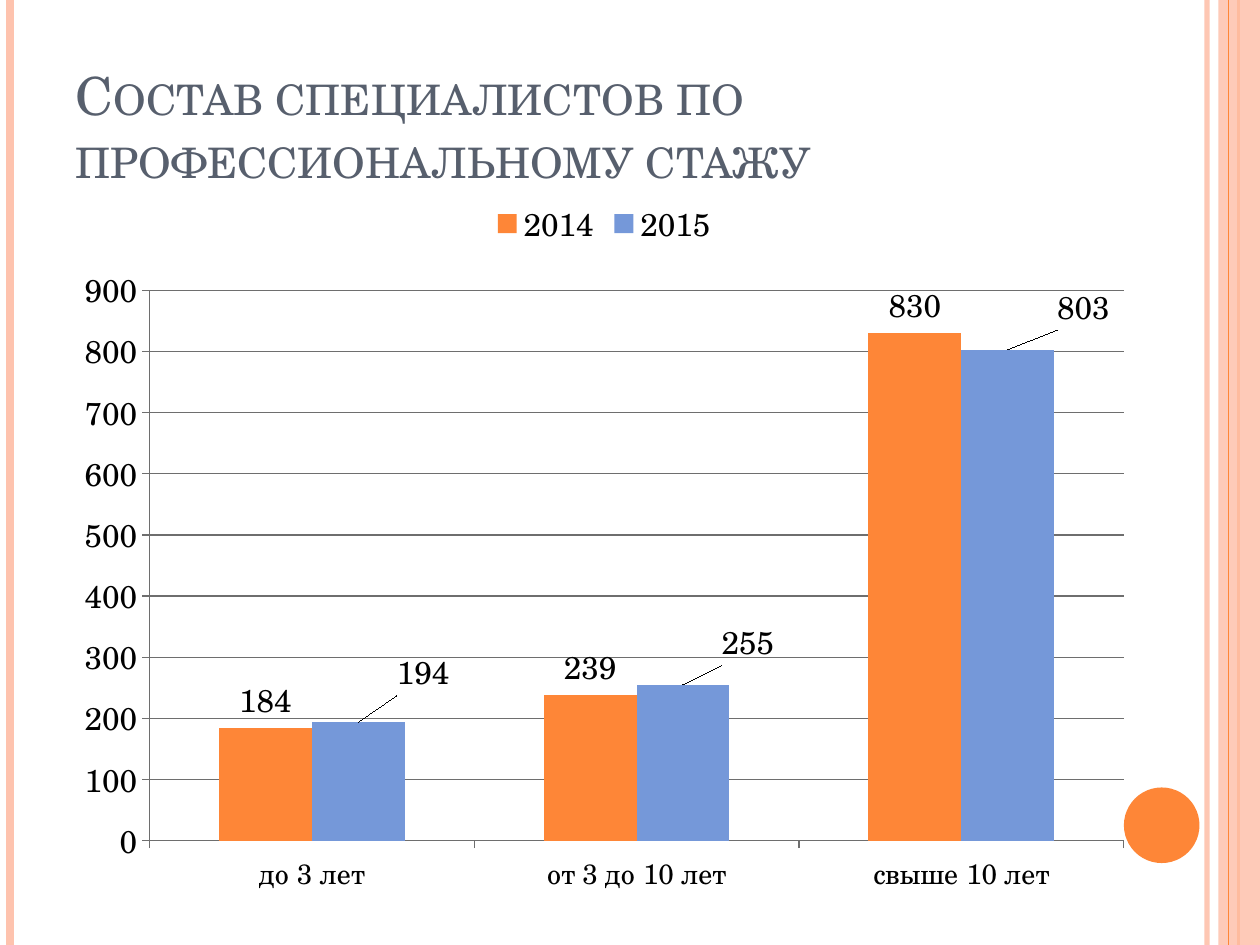
from typing import NamedTuple

from lxml.etree import SubElement
from pptx import Presentation
from pptx.chart.data import CategoryChartData
from pptx.dml.color import RGBColor
from pptx.enum.chart import XL_CHART_TYPE as ChartType
from pptx.enum.chart import XL_LABEL_POSITION as LabelPosition
from pptx.enum.chart import XL_LEGEND_POSITION as LegendPosition
from pptx.enum.chart import XL_TICK_MARK as TickMark
from pptx.enum.shapes import MSO_CONNECTOR as Connector
from pptx.enum.shapes import MSO_SHAPE as Shape
from pptx.enum.text import MSO_ANCHOR as Anchor
from pptx.enum.text import MSO_AUTO_SIZE as AutoSize
from pptx.enum.text import PP_ALIGN as Align
from pptx.oxml import parse_xml
from pptx.oxml.ns import nsdecls, qn
from pptx.util import Inches, Pt

FONT = "TeX Gyre Schola"
ORANGE, PEACH, BLUE, SLATE = "FE8637", "FEC3AE", "7598D9", "575F6D"
BLACK, GRAY = "000000", "6E6E6E"
PAGE_HEIGHT = 7.5


class Stripe(NamedTuple):
    x: float
    color: str
    width: float
    opacity: int = 100


class Block(NamedTuple):
    kind: Shape
    left: float
    top: float
    width: float
    height: float
    color: str
    opacity: int = 100


class Series(NamedTuple):
    name: str
    values: tuple[int, ...]
    color: str
    label_shifts: tuple[tuple[float, float], ...] = ()


DECORATION = (
    Stripe(9.58, PEACH, 3, 93),
    Stripe(0.08, PEACH, 4.5),
    Stripe(9.83, ORANGE, 1.5),
    Block(Shape.RECTANGLE, 9.67, 0, 0.33, PAGE_HEIGHT, PEACH, 87),
    Stripe(9.75, ORANGE, 0.75),
    Block(Shape.OVAL, 8.92, 6.25, 0.6, 0.6, ORANGE),
)
CATEGORIES = ("до 3 лет", "от 3 до 10 лет", "свыше 10 лет")
SERIES = (
    Series("2014", (184, 239, 830), ORANGE),
    Series("2015", (194, 255, 803), BLUE,
           ((0.06, -0.03), (0.06, -0.02), (0.07, -0.02))),
)


def paint(fill, color: str, opacity: int = 100) -> None:
    fill.solid()
    fill.fore_color.rgb = RGBColor.from_string(color)
    if opacity < 100:
        (node,) = fill._xPr.xpath("./a:solidFill/a:srgbClr")
        SubElement(node, qn("a:alpha"), val=str(opacity * 1000))


def style_font(font, size: float, color: str = BLACK) -> None:
    for name, value in {"name": FONT, "size": Pt(size), "bold": False}.items():
        setattr(font, name, value)
    paint(font.fill, color)


def draw_stripe(page, stripe: Stripe) -> None:
    line = page.shapes.add_connector(
        Connector.STRAIGHT, Inches(stripe.x), 0, Inches(stripe.x), Inches(PAGE_HEIGHT))
    line.line.width = Pt(stripe.width)
    paint(line.line.fill, stripe.color, stripe.opacity)
    SubElement(line._element.spPr, qn("a:effectLst"))


def draw_block(page, block: Block) -> None:
    shape = page.shapes.add_shape(block.kind, *map(Inches, block[1:5]))
    shape.shadow.inherit = False
    paint(shape.fill, block.color, block.opacity)
    shape.line.fill.background()


def place_title(page, text: str) -> None:
    title = page.shapes.title
    place = {"left": 0.5, "top": 0.3, "width": 9.07, "height": 1.25}
    for name, value in place.items():
        setattr(title, name, Inches(value))
    frame = title.text_frame
    settings = {"vertical_anchor": Anchor.BOTTOM, "word_wrap": True,
                "auto_size": AutoSize.NONE}
    for name, value in settings.items():
        setattr(frame, name, value)
    para = frame.paragraphs[0]
    para.alignment = Align.LEFT
    span = para.add_run()
    span.text = text
    style_font(span.font, 30, SLATE)
    span.font._element.set("cap", "small")


def manual_layout(inner: bool = False, **fractions: float):
    """Build a c:layout whose offsets and sizes are fractions of the chart."""
    modes = ('<c:layoutTarget val="inner"/><c:xMode val="edge"/>'
             '<c:yMode val="edge"/>') if inner else ""
    values = "".join(f'<c:{key} val="{value}"/>' for key, value in fractions.items())
    return parse_xml(f'<c:layout {nsdecls("c")}><c:manualLayout>{modes}{values}'
                     "</c:manualLayout></c:layout>")


def format_axis(axis, size: float) -> None:
    axis.major_tick_mark = TickMark.OUTSIDE
    axis.minor_tick_mark = TickMark.NONE
    style_font(axis.tick_labels.font, size)
    paint(axis.format.line.fill, GRAY)
    axis.format.line.width = Pt(0.75)


def format_series(plotted, series: Series) -> None:
    paint(plotted.format.fill, series.color)
    plotted.invert_if_negative = False
    labels = plotted.data_labels
    labels.show_value = True
    labels.position = LabelPosition.OUTSIDE_END
    style_font(labels.font, 18)
    for index, (x, y) in enumerate(series.label_shifts):
        label = plotted.points[index].data_label
        style_font(label.font, 18)
        label.position = LabelPosition.OUTSIDE_END
        (mark,) = plotted._element.xpath(f"./c:dLbls/c:dLbl/c:idx[@val='{index}']")
        mark.addnext(manual_layout(x=x, y=y))


def draw_chart(page) -> None:
    data = CategoryChartData()
    data.categories = CATEGORIES
    for series in SERIES:
        data.add_series(series.name, series.values)
    chart = page.shapes.add_chart(
        ChartType.COLUMN_CLUSTERED, *map(Inches, (0.5, 1.47, 8.59, 5.75)), data).chart
    style_font(chart.font, 18)
    chart.has_title = False
    chart.has_legend = True
    chart.legend.position = LegendPosition.TOP
    chart.legend.include_in_layout = False
    style_font(chart.legend.font, 18)

    format_axis(chart.category_axis, 16)
    axis = chart.value_axis
    format_axis(axis, 18)
    scale = {"minimum_scale": 0, "maximum_scale": 900, "major_unit": 100,
             "has_major_gridlines": True}
    for name, value in scale.items():
        setattr(axis, name, value)
    paint(axis.major_gridlines.format.line.fill, GRAY)

    plot = chart.plots[0]
    plot.gap_width, plot.overlap, plot.vary_by_categories = 150, 0, False
    for plotted, series in zip(plot.series, SERIES):
        format_series(plotted, series)
    (area,) = chart._chartSpace.xpath("./c:chart/c:plotArea")
    for layout in area.findall(qn("c:layout")):
        area.remove(layout)
    area.insert(0, manual_layout(inner=True, x=0.08, y=0.145, w=0.9, h=0.76))


def main() -> None:
    deck = Presentation()
    deck.slide_width, deck.slide_height = Inches(10), Inches(PAGE_HEIGHT)
    page = deck.slides.add_slide(deck.slide_layouts[5])
    for item in DECORATION:
        if isinstance(item, Stripe):
            draw_stripe(page, item)
        else:
            draw_block(page, item)
    place_title(page, "Состав специалистов по профессиональному стажу")
    draw_chart(page)
    deck.save("out.pptx")


if __name__ == "__main__":
    main()
